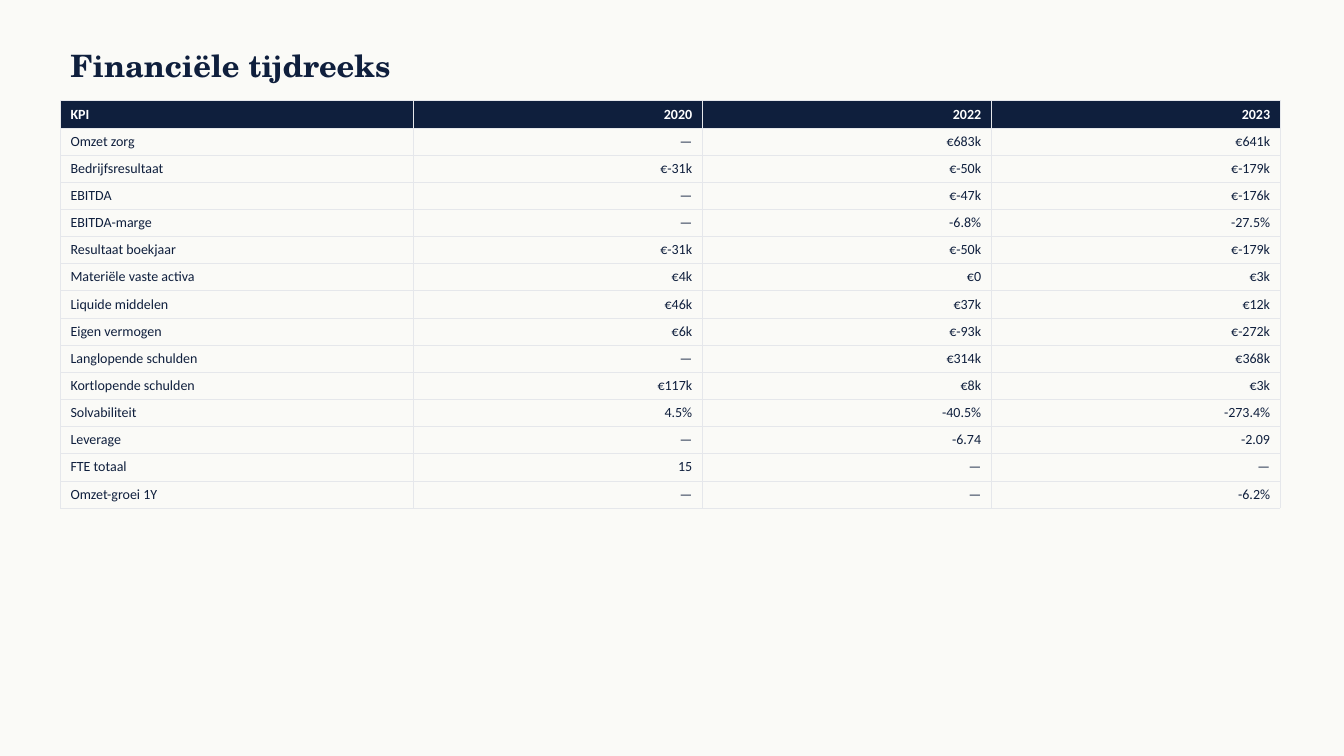
from dataclasses import dataclass

from lxml.etree import SubElement
from pptx import Presentation
from pptx.dml.color import RGBColor
from pptx.enum.text import MSO_ANCHOR, PP_ALIGN
from pptx.oxml.ns import qn
from pptx.util import Pt


@dataclass(frozen=True)
class Theme:
    paper: str = "FAFAF7"
    navy: str = "0F1F3D"
    white: str = "FFFFFF"
    line: str = "E5E7EB"
    serif: str = "TeX Gyre Schola"
    sans: str = "Calibri"
    title: float = 22
    body: float = 10
    rule: float = 0.5


THEME = Theme()
LEFT = 43.2
LABEL, YEAR, ROW = 252, 206.4, 19.4  # column widths and row height

ROWS = [
    ("KPI", "2020", "2022", "2023"),
    ("Omzet zorg", "—", "€683k", "€641k"),
    ("Bedrijfsresultaat", "€-31k", "€-50k", "€-179k"),
    ("EBITDA", "—", "€-47k", "€-176k"),
    ("EBITDA-marge", "—", "-6.8%", "-27.5%"),
    ("Resultaat boekjaar", "€-31k", "€-50k", "€-179k"),
    ("Materiële vaste activa", "€4k", "€0", "€3k"),
    ("Liquide middelen", "€46k", "€37k", "€12k"),
    ("Eigen vermogen", "€6k", "€-93k", "€-272k"),
    ("Langlopende schulden", "—", "€314k", "€368k"),
    ("Kortlopende schulden", "€117k", "€8k", "€3k"),
    ("Solvabiliteit", "4.5%", "-40.5%", "-273.4%"),
    ("Leverage", "—", "-6.74", "-2.09"),
    ("FTE totaal", "15", "—", "—"),
    ("Omzet-groei 1Y", "—", "—", "-6.2%"),
]


def write(frame, text, face, size, color, bold, align=PP_ALIGN.LEFT):
    para = frame.paragraphs[0]
    para.text = text
    para.alignment = align
    font = para.runs[0].font
    font.name, font.size, font.bold = face, Pt(size), bold
    font.color.rgb = RGBColor.from_string(color)


def border(cell):
    props = cell._tc.get_or_add_tcPr()
    for side in ("a:lnL", "a:lnR", "a:lnT", "a:lnB"):
        edge = SubElement(props, qn(side), w=str(Pt(THEME.rule)))
        fill = SubElement(edge, qn("a:solidFill"))
        SubElement(fill, qn("a:srgbClr"), val=THEME.line)


def add_title(slide, text):
    box = slide.shapes.add_textbox(Pt(LEFT), Pt(28.8), Pt(864), Pt(36))
    frame = box.text_frame
    frame.word_wrap = True
    frame.vertical_anchor = MSO_ANCHOR.MIDDLE
    write(frame, text, THEME.serif, THEME.title, THEME.navy, True)


def fill_cell(cell, text, head, align):
    border(cell)
    if head:
        cell.fill.solid()
        cell.fill.fore_color.rgb = RGBColor.from_string(THEME.navy)
    else:
        cell.fill.background()
    color = THEME.white if head else THEME.navy
    write(cell.text_frame, text, THEME.sans, THEME.body, color, head, align)


def add_grid(slide, rows):
    widths = [LABEL] + [YEAR] * (len(rows[0]) - 1)
    table = slide.shapes.add_table(
        len(rows), len(widths), Pt(LEFT), Pt(72),
        Pt(sum(widths)), Pt(ROW * len(rows))).table
    table.horz_banding = False
    for col, width in zip(table.columns, widths):
        col.width = Pt(width)
    for r, row in enumerate(rows):
        table.rows[r].height = Pt(ROW)
        for c, text in enumerate(row):
            align = PP_ALIGN.RIGHT if c else PP_ALIGN.LEFT
            fill_cell(table.cell(r, c), text, r == 0, align)


def main():
    deck = Presentation()
    deck.slide_width, deck.slide_height = Pt(960), Pt(540)
    slide = deck.slides.add_slide(deck.slide_layouts[6])

    # Background
    paper = slide.background.fill
    paper.solid()
    paper.fore_color.rgb = RGBColor.from_string(THEME.paper)

    # Title and yearly figures
    add_title(slide, "Financiële tijdreeks")
    add_grid(slide, ROWS)
    deck.save("out.pptx")


if __name__ == "__main__":
    main()
